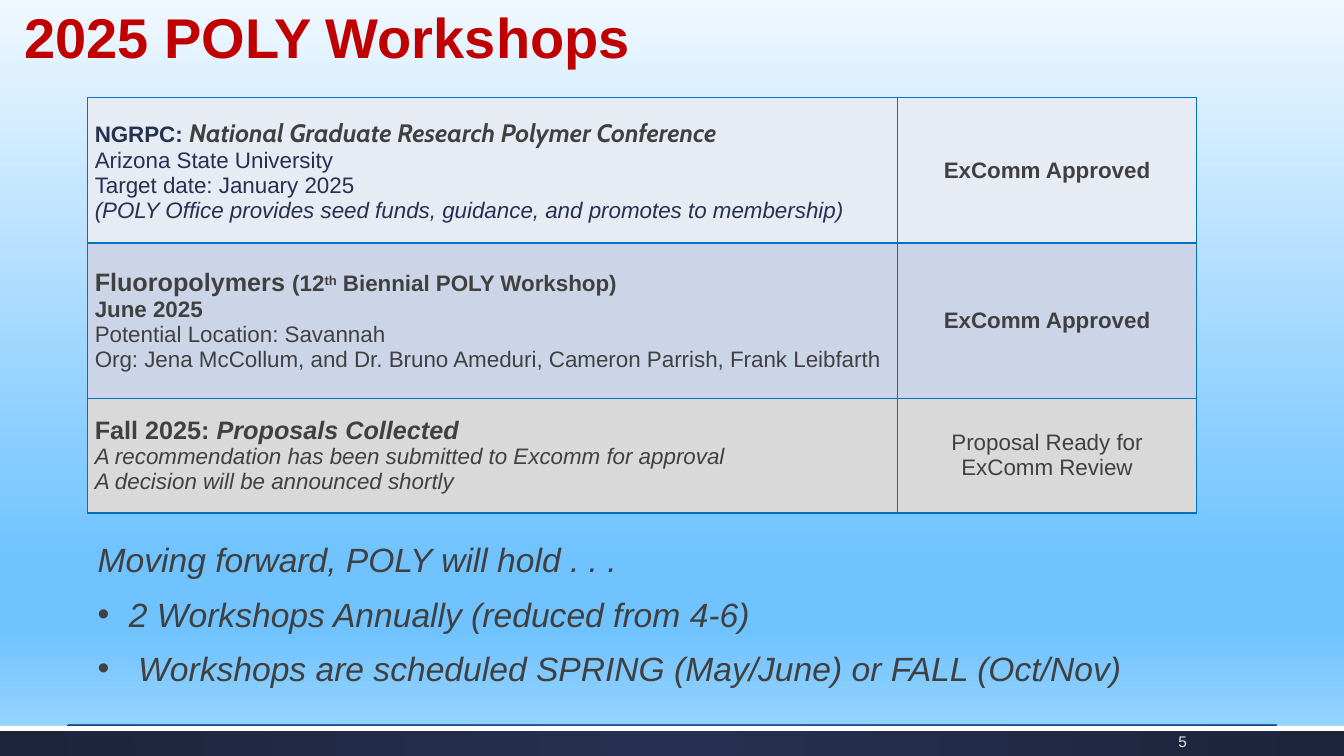
"""Build the 2025 POLY Workshops slide."""
from lxml.etree import SubElement
from pptx import Presentation
from pptx.dml.color import RGBColor
from pptx.enum.shapes import MSO_CONNECTOR, MSO_SHAPE
from pptx.enum.text import MSO_ANCHOR, PP_ALIGN
from pptx.oxml.ns import qn
from pptx.util import Inches, Pt

COLORS = {
    "title": "C00000", "text": "404040", "navy": "263050", "deep": "1D243C",
    "border": "0070C0", "white": "FFFFFF", "number": "E5E8E8",
    "sky0": "EFF8FF", "sky1": "70C3FF", "sky2": "A0D7FF",
    "row0": "E7EBF4", "row1": "CCD5E8", "row2": "D9D9D9",
}
TITLE = "2025 POLY Workshops"
SKY = [(0, "sky0"), (74, "sky1"), (83, "sky1"), (100, "sky2")]
BAR = [(0, "navy"), (100, "deep")]

# fields of a run: text, size, style (b bold, i italic, ^ superscript), colour, font
ROWS = [
    ("row0", 1.44,
     [[("NGRPC: ", 16, "b", "navy"),
       ("National Graduate Research Polymer Conference", 18, "bi", "text", "Cabin")],
      [("Arizona State University", 16, "", "navy")],
      [("Target date: January 2025", 16, "", "navy")],
      [("(POLY Office provides seed funds, guidance, and promotes to membership)",
        16, "i", "navy")]],
     [[("ExComm Approved", 16, "b")]]),
    ("row1", 1.54,
     [[("Fluoropolymers ", 18, "b"), ("(12", 16, "b"), ("th", 16, "b^"),
       (" Biennial POLY Workshop)", 16, "b")],
      [("June 2025", 16, "b")],
      [("Potential Location: Savannah", 16)],
      [("Org: Jena McCollum, and Dr. Bruno Ameduri, Cameron Parrish, Frank Leibfarth", 16)]],
     [[("ExComm Approved", 16, "b")]]),
    ("row2", 1.14,
     [[("Fall 2025: ", 18, "b"), ("Proposals Collected", 18, "bi")],
      [("A recommendation has been submitted to Excomm for approval", 16, "i")],
      [("A decision will be announced shortly", 16, "i")]],
     [[("Proposal Ready for", 16)], [("ExComm Review", 16)]]),
]
COLS = [8.03, 2.97]
PLANS = [
    (False, "Moving forward, POLY will hold . . ."),
    (True, "2 Workshops Annually (reduced from 4-6)"),
    (True, " Workshops are scheduled SPRING (May/June) or FALL (Oct/Nov)"),
]


def rgb(name):
    return RGBColor.from_string(COLORS[name])


def box(*lengths):
    return [Inches(n) for n in lengths]


def add_run(p, text, size, style="", color="text", font="Arial"):
    r = p.add_run()
    r.text = text
    r.font.name, r.font.size = font, Pt(size)
    r.font.bold, r.font.italic = "b" in style, "i" in style
    r.font.color.rgb = rgb(color)
    if "^" in style:
        r.font._element.set("baseline", "30000")


def add_paragraphs(tf, paragraphs, align):
    for i, runs in enumerate(paragraphs):
        p = tf.add_paragraph() if i else tf.paragraphs[0]
        p.alignment = align
        for run in runs:
            add_run(p, *run)


def set_gradient(fill, owner, stops, radial=False):
    fill.gradient()
    grad = next(owner.iter(qn("a:gradFill")))
    for child in list(grad):
        grad.remove(child)
    gs_list = SubElement(grad, qn("a:gsLst"))
    for pos, color in stops:
        gs = SubElement(gs_list, qn("a:gs"), pos=str(pos * 1000))
        SubElement(gs, qn("a:srgbClr"), val=COLORS[color])
    if radial:
        center = SubElement(grad, qn("a:path"), path="circle")
        SubElement(center, qn("a:fillToRect"), dict.fromkeys("ltrb", "50000"))
    else:
        SubElement(grad, qn("a:lin"), ang="5400000", scaled="0")


def add_band(s, height):
    sp = s.shapes.add_shape(MSO_SHAPE.RECTANGLE, *box(0, 7.2, 13.33, height))
    sp.shadow.inherit = False
    sp.line.fill.background()
    return sp


def add_footer(s):
    rule = s.shapes.add_connector(MSO_CONNECTOR.STRAIGHT, *box(0.67, 7.19, 12.67, 7.19))
    rule.line.color.rgb = rgb("border")
    rule.line.width = Pt(0.5)
    SubElement(rule._element.spPr, qn("a:effectLst"))
    bar = add_band(s, 0.3)
    set_gradient(bar.fill, bar.element, BAR, radial=True)
    stripe = add_band(s, 0.05)
    stripe.fill.solid()
    stripe.fill.fore_color.rgb = rgb("white")
    tf = s.shapes.add_textbox(*box(11.17, 7.23, 0.7, 0.26)).text_frame
    tf.word_wrap = True
    tf.vertical_anchor = MSO_ANCHOR.MIDDLE
    add_paragraphs(tf, [[("5", 11, "", "number")]], PP_ALIGN.RIGHT)


def format_cell(cell, color, paragraphs, align):
    cell.margin_left = cell.margin_right = Inches(0.07)
    cell.margin_top = cell.margin_bottom = 0
    cell.vertical_anchor = MSO_ANCHOR.MIDDLE
    add_paragraphs(cell.text_frame, paragraphs, align)
    tc_pr = cell._tc.get_or_add_tcPr()
    for side in ("lnL", "lnR", "lnT", "lnB"):
        ln = SubElement(tc_pr, qn(f"a:{side}"), w=str(Pt(1)))
        SubElement(SubElement(ln, qn("a:solidFill")), qn("a:srgbClr"), val=COLORS["border"])
    cell.fill.solid()
    cell.fill.fore_color.rgb = rgb(color)


def add_workshops(s):
    height = sum(row[1] for row in ROWS)
    table = s.shapes.add_table(
        len(ROWS), len(COLS), *box(0.87, 0.97, sum(COLS), height)).table
    for col, width in zip(table.columns, COLS):
        col.width = Inches(width)
    for i, (color, row_height, details, status) in enumerate(ROWS):
        table.rows[i].height = Inches(row_height)
        format_cell(table.cell(i, 0), color, details, PP_ALIGN.LEFT)
        format_cell(table.cell(i, 1), color, status, PP_ALIGN.CENTER)


def add_plans(s):
    tf = s.shapes.add_textbox(*box(0.87, 5.3, 10.67, 1.59)).text_frame
    tf.word_wrap = True
    add_paragraphs(tf, [[(text, 24, "i")] for _, text in PLANS], PP_ALIGN.LEFT)
    for p, (bulleted, _) in zip(tf.paragraphs, PLANS):
        p.space_after = Pt(10)
        if bulleted:
            p_pr = p._p.get_or_add_pPr()
            p_pr.set("marL", str(Inches(0.31)))
            p_pr.set("indent", str(-Inches(0.31)))
            SubElement(p_pr, qn("a:buFont"), typeface="Arial")
            SubElement(p_pr, qn("a:buChar"), char="•")


def add_title(s):
    title = s.shapes.title
    title.left, title.top, title.width, title.height = box(0.14, 0.14, 12.15, 0.61)
    tf = title.text_frame
    tf.vertical_anchor = MSO_ANCHOR.BOTTOM
    add_paragraphs(tf, [[(TITLE, 40, "b", "title")]], PP_ALIGN.LEFT)
    tf.paragraphs[0].line_spacing = 0.9


def main():
    prs = Presentation()
    prs.slide_width, prs.slide_height = box(13.33, 7.5)
    s = prs.slides.add_slide(prs.slide_layouts[5])
    set_gradient(s.background.fill, s.element, SKY)
    add_footer(s)
    add_workshops(s)
    add_plans(s)
    add_title(s)
    prs.save("out.pptx")


if __name__ == "__main__":
    main()
